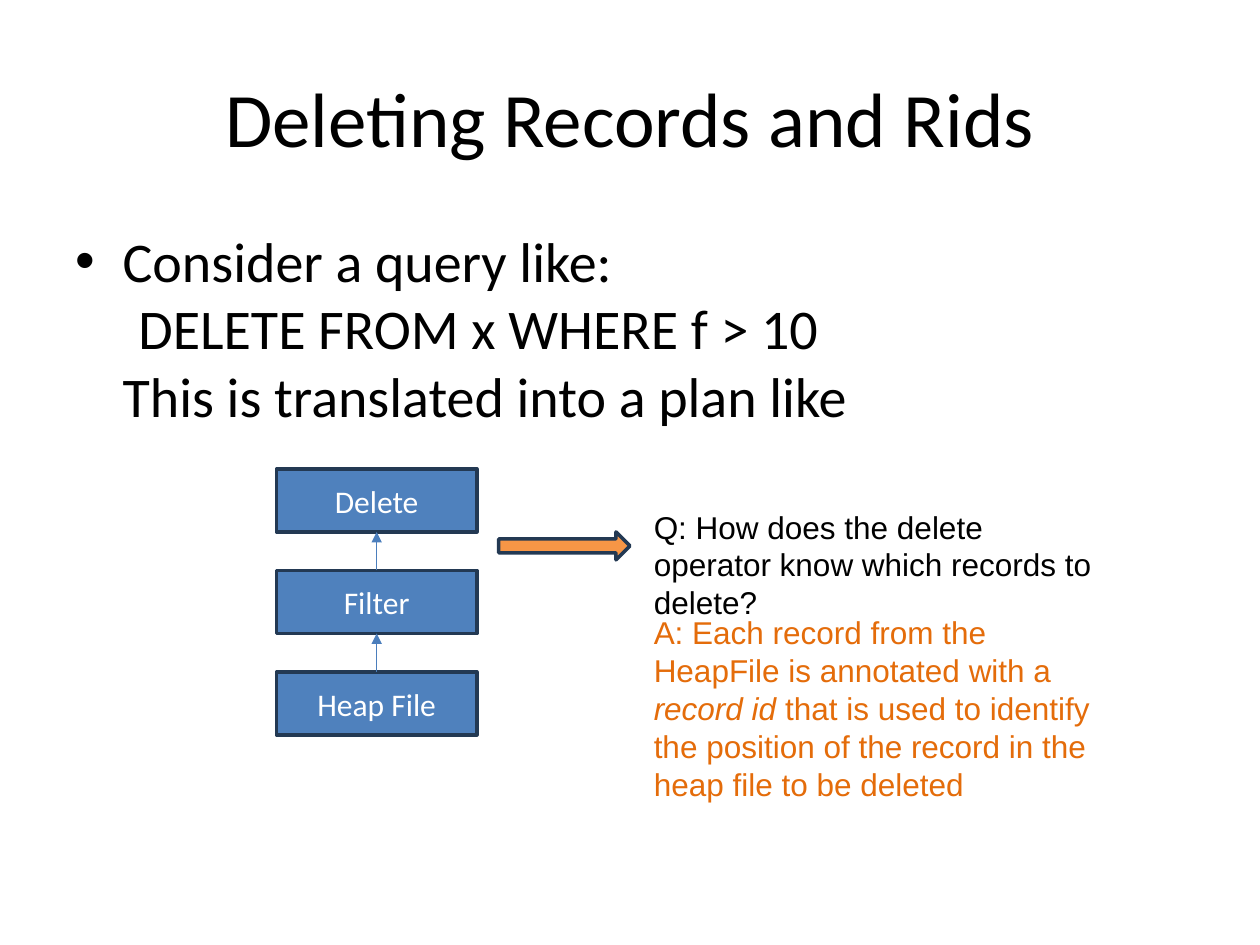
from dataclasses import dataclass

from lxml.etree import SubElement
from pptx import Presentation
from pptx.dml.color import RGBColor
from pptx.enum.shapes import MSO_CONNECTOR as Connector, MSO_SHAPE as Shape
from pptx.enum.text import MSO_ANCHOR as Anchor, PP_ALIGN as Align
from pptx.oxml.ns import qn
from pptx.util import Pt

BLACK = RGBColor(0x00, 0x00, 0x00)
WHITE = RGBColor(0xFF, 0xFF, 0xFF)
BLUE = RGBColor(0x4F, 0x81, 0xBD)
NAVY = RGBColor(0x23, 0x39, 0x53)
LINK_BLUE = RGBColor(0x4B, 0x7E, 0xBC)
ORANGE = RGBColor(0xF7, 0x96, 0x46)
DARK_ORANGE = RGBColor(0xE4, 0x6C, 0x0A)

OPERATORS = ("Heap File", "Filter", "Delete")
OPERATOR_LEFT, LOWEST_TOP, OPERATOR_STEP = 158, 384, 58
OPERATOR_WIDTH, OPERATOR_HEIGHT = 114.5, 36


@dataclass(frozen=True)
class Area:
    left: float
    top: float
    width: float
    height: float

    def lengths(self):
        return Pt(self.left), Pt(self.top), Pt(self.width), Pt(self.height)


@dataclass(frozen=True)
class Span:
    text: str
    italic: bool = False


@dataclass(frozen=True)
class Note:
    area: Area
    color: RGBColor
    spans: tuple[Span, ...]


NOTES = (
    Note(Area(366.5, 286.5, 267, 72.5), BLACK, (
        Span("Q: How does the delete operator know which records to delete?"),
    )),
    Note(Area(366.5, 347, 267, 116.5), DARK_ORANGE, (
        Span("A: Each record from the HeapFile is annotated with a "),
        Span("record id", italic=True),
        Span(" that is used to identify the position of the record"
             " in the heap file to be deleted"),
    )),
)


def format_runs(paragraph, font: str, size: float, color: RGBColor) -> None:
    for run in paragraph.runs:
        run.font.name = font
        run.font.size = Pt(size)
        run.font.color.rgb = color


def add_title(page, text: str) -> None:
    title = page.shapes.title
    title.left, title.top, title.width, title.height = Area(36, 21.5, 648, 90).lengths()
    title.text_frame.text = text
    title.text_frame.vertical_anchor = Anchor.MIDDLE
    paragraph = title.text_frame.paragraphs[0]
    paragraph.alignment = Align.CENTER
    format_runs(paragraph, "Calibri", 44, BLACK)


def add_text_box(page, area: Area):
    box = page.shapes.add_textbox(*area.lengths())
    box.text_frame.word_wrap = True
    return box.text_frame.paragraphs[0]


def add_query(page) -> None:
    paragraph = add_text_box(page, Area(36, 126, 648, 356.5))
    paragraph.text = ("Consider a query like:\v\tDELETE FROM x WHERE f > 10"
                      "\vThis is translated into a plan like")
    paragraph.space_before = Pt(6.4)
    format_runs(paragraph, "Calibri", 32, BLACK)
    properties = paragraph._p.get_or_add_pPr()
    properties.set("marL", str(Pt(27)))
    properties.set("indent", str(Pt(-27)))
    properties.set("defTabSz", str(Pt(36)))
    SubElement(properties, qn("a:buFont"), typeface="Arial")
    SubElement(properties, qn("a:buChar"), char="•")


def add_block(page, kind: Shape, area: Area, fill: RGBColor):
    block = page.shapes.add_shape(kind, *area.lengths())
    block.shadow.inherit = False
    block.fill.solid()
    block.fill.fore_color.rgb = fill
    block.line.color.rgb = NAVY
    block.line.width = Pt(2)
    return block


def add_operator(page, name: str, top: float):
    area = Area(OPERATOR_LEFT, top, OPERATOR_WIDTH, OPERATOR_HEIGHT)
    block = add_block(page, Shape.RECTANGLE, area, BLUE)
    block.text_frame.text = name
    block.text_frame.vertical_anchor = Anchor.MIDDLE
    paragraph = block.text_frame.paragraphs[0]
    paragraph.alignment = Align.CENTER
    format_runs(paragraph, "Calibri", 18, WHITE)
    return block


def link_upward(page, lower, upper) -> None:
    link = page.shapes.add_connector(Connector.STRAIGHT, 0, 0, 0, 0)
    link.begin_connect(lower, 0)
    link.end_connect(upper, 2)
    link.line.color.rgb = LINK_BLUE
    link.line.width = Pt(0.75)
    SubElement(link.line._get_or_add_ln(), qn("a:tailEnd"), type="triangle")
    SubElement(link._element.spPr, qn("a:effectLst"))


def add_note(page, note: Note) -> None:
    paragraph = add_text_box(page, note.area)
    for span in note.spans:
        run = paragraph.add_run()
        run.text = span.text
        run.font.italic = span.italic
    format_runs(paragraph, "Arial", 18, note.color)


def main() -> None:
    deck = Presentation()
    deck.slide_width, deck.slide_height = Pt(720), Pt(540)
    page = deck.slides.add_slide(deck.slide_layouts[5])

    add_title(page, "Deleting Records and Rids")
    add_query(page)
    operators = [add_operator(page, name, LOWEST_TOP - level * OPERATOR_STEP)
                 for level, name in enumerate(OPERATORS)]
    for lower, upper in zip(operators, operators[1:]):
        link_upward(page, lower, upper)
    add_block(page, Shape.RIGHT_ARROW, Area(285, 304, 75, 16), ORANGE)
    for note in NOTES:
        add_note(page, note)

    deck.save("out.pptx")


if __name__ == "__main__":
    main()
